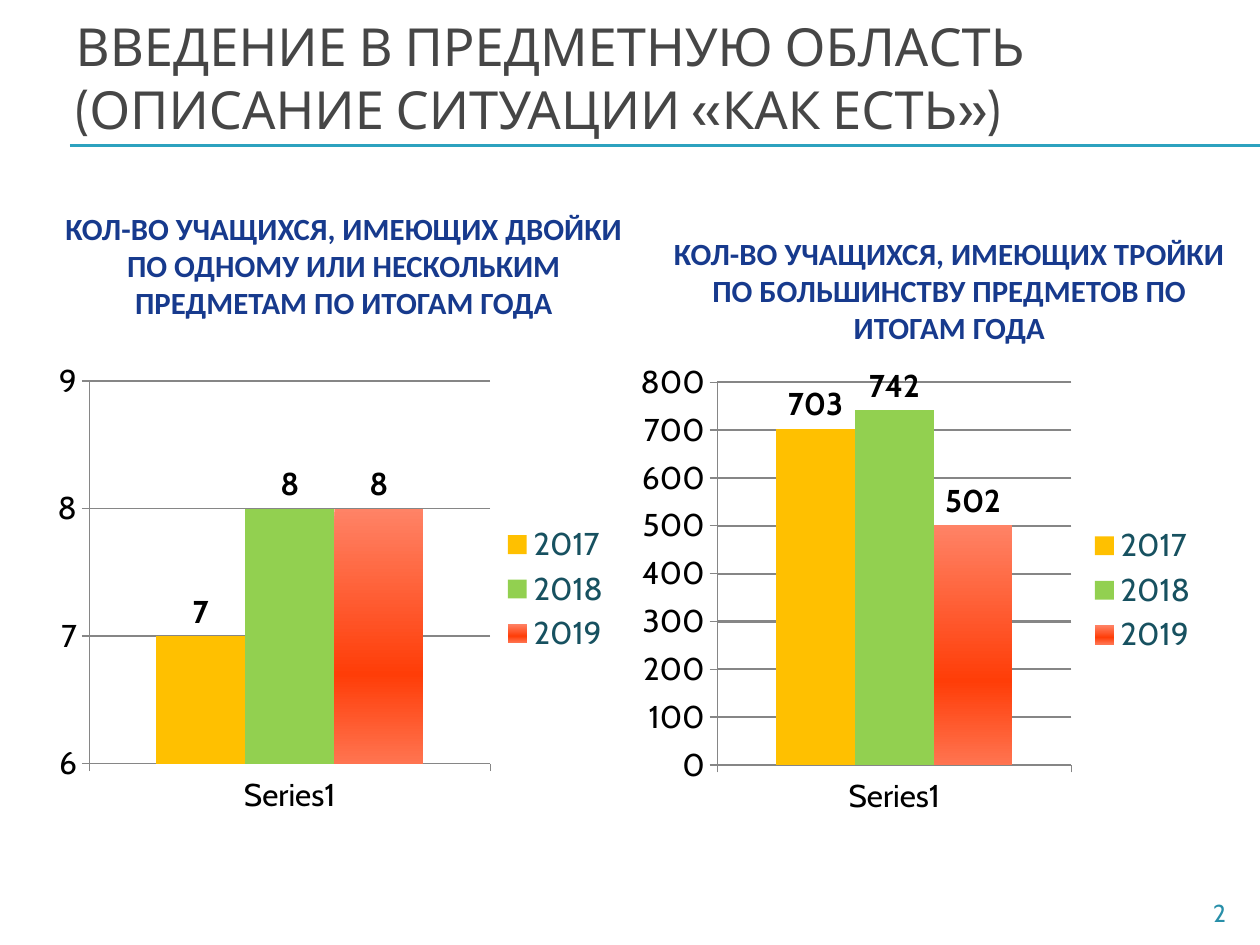
from copy import deepcopy

from lxml import etree
from pptx import Presentation
from pptx.chart.data import CategoryChartData
from pptx.dml.color import RGBColor
from pptx.enum.chart import XL_CHART_TYPE as Chart, XL_LABEL_POSITION as LabelPos
from pptx.enum.chart import XL_LEGEND_POSITION as LegendPos, XL_TICK_MARK as Tick
from pptx.enum.shapes import MSO_CONNECTOR as Conn, MSO_SHAPE as Shape
from pptx.enum.text import MSO_ANCHOR as Anchor, MSO_AUTO_SIZE as AutoSize, PP_ALIGN as Align
from pptx.oxml import parse_xml
from pptx.oxml.ns import nsdecls, qn
from pptx.util import Pt


def rgb(value):
    return RGBColor.from_string(value)


class Deck:
    font, heading_font = "Cabin", "Calibri"
    teal, heading, grey, axis = "2DA2BF", "173A8D", "464646", "868686"
    years = {"2017": "FFC000", "2018": "92D050", "2019": None}
    red_stops = [(0, "FF8366"), (65, "FF3D08"), (100, "FF7450")]

    def __init__(self, width, height):
        self.prs = Presentation()
        self.prs.slide_width, self.prs.slide_height = Pt(width), Pt(height)
        self.s = None

    def add_slide(self):
        self.s = self.prs.slides.add_slide(self.prs.slide_layouts[5])

    def style(self, font, size, color, bold=False, name=None):
        font.name, font.size, font.bold = name or self.font, Pt(size), bold
        font.color.rgb = rgb(color)

    def run(self, p, text, size, color, **kw):
        r = p.add_run()
        r.text = text
        self.style(r.font, size, color, **kw)

    def title(self, lines, x, y, w, h):
        sp = self.s.shapes.title
        sp.left, sp.top, sp.width, sp.height = Pt(x), Pt(y), Pt(w), Pt(h)
        tf = sp.text_frame
        tf.auto_size, tf.vertical_anchor = AutoSize.NONE, Anchor.MIDDLE
        p = tf.paragraphs[0]
        p.alignment = Align.LEFT
        for i, line in enumerate(lines):
            if i:
                p.add_line_break()
            self.run(p, line, 30, self.grey)

    def rule(self, x1, x2, y):
        ln = self.s.shapes.add_connector(Conn.STRAIGHT, Pt(x1), Pt(y), Pt(x2), Pt(y))
        ln.line.color.rgb, ln.line.width = rgb(self.teal), Pt(0.75)
        etree.SubElement(ln._element.spPr, qn("a:effectLst"))

    def text(self, text, x, y, w, h):
        tf = self.s.shapes.add_textbox(Pt(x), Pt(y), Pt(w), Pt(h)).text_frame
        tf.word_wrap = True
        tf.margin_top = tf.margin_bottom = 0
        p = tf.paragraphs[0]
        p.alignment = Align.RIGHT
        self.run(p, text, 14, "288FA9")

    def chart_heading(self, text, x, y, w, h):
        sp = self.s.shapes.add_shape(Shape.RECTANGLE, Pt(x), Pt(y), Pt(w), Pt(h))
        sp.shadow.inherit = False
        sp.line.fill.background()
        sp.fill.solid()
        sp.fill.fore_color.rgb = rgb("FFFFFF")
        color = sp._element.spPr.find(".//" + qn("a:srgbClr"))
        etree.SubElement(color, qn("a:alpha"), val="74000")
        tf = sp.text_frame
        tf.word_wrap, tf.vertical_anchor = True, Anchor.MIDDLE
        p = tf.paragraphs[0]
        p.alignment = Align.CENTER
        self.run(p, text, 17.6, self.heading, bold=True, name=self.heading_font)

    def red_gradient(self, fill, sp_pr):
        fill.gradient()
        fill.gradient_angle = 270
        stops = sp_pr.find(".//" + qn("a:gsLst"))
        stops.insert(1, deepcopy(stops[0]))
        for stop, (pos, color) in zip(fill.gradient_stops, self.red_stops):
            stop.position, stop.color.rgb = pos / 100, rgb(color)

    def plot_layout(self, chart, x, y, w, h):
        parts = "".join(f'<c:{tag} val="{val}"/>' for tag, val in [
            ("layoutTarget", "inner"), ("xMode", "edge"), ("yMode", "edge"),
            ("x", x), ("y", y), ("w", w), ("h", h)])
        area = chart._chartSpace.find(".//" + qn("c:plotArea"))
        for old in area.findall(qn("c:layout")):
            area.remove(old)
        area.insert(0, parse_xml(f"<c:layout {nsdecls('c')}><c:manualLayout>"
                                 f"{parts}</c:manualLayout></c:layout>"))

    def chart(self, values, x, y, w, h, scale, plot, grid_width):
        data = CategoryChartData()
        data.categories = ["Series1"]
        for year, value in zip(self.years, values):
            data.add_series(year, [value])
        chart = self.s.shapes.add_chart(
            Chart.COLUMN_CLUSTERED, Pt(x), Pt(y), Pt(w), Pt(h), data).chart
        self.style(chart.font, 18, "000000")
        chart.has_title = False
        self.plot_layout(chart, *plot)

        # Legend
        chart.has_legend = True
        chart.legend.position = LegendPos.RIGHT
        chart.legend.include_in_layout = False
        self.style(chart.legend.font, 18, "175160")

        # Axes
        val_ax = chart.value_axis
        val_ax.minimum_scale, val_ax.maximum_scale, val_ax.major_unit = scale
        for ax in (chart.category_axis, val_ax):
            ax.major_tick_mark = Tick.OUTSIDE
            ax.format.line.color.rgb = rgb(self.axis)
            ax.format.line.width = Pt(0.75)
        grid = val_ax.major_gridlines.format.line
        grid.color.rgb, grid.width = rgb(self.axis), Pt(grid_width)

        # Columns
        cols = chart.plots[0]
        cols.gap_width, cols.overlap, cols.vary_by_categories = 150, 0, False
        for ser, color in zip(cols.series, self.years.values()):
            fill = ser.format.fill
            if color:
                fill.solid()
                fill.fore_color.rgb = rgb(color)
            else:
                self.red_gradient(fill, ser._element.spPr)
            labels = ser.data_labels
            labels.show_value, labels.position = True, LabelPos.OUTSIDE_END
            self.style(labels.font, 18, "000000", bold=True)


def main():
    deck = Deck(720, 540)
    deck.add_slide()

    # Title and the double rule under it
    for y in (82.8, 83.5):
        deck.rule(40, 720, y)
    deck.title(["ВВЕДЕНИЕ В ПРЕДМЕТНУЮ ОБЛАСТЬ", "(ОПИСАНИЕ СИТУАЦИИ «КАК ЕСТЬ»)"],
               36, 11, 684, 66)

    # Failing marks
    deck.chart([7, 8, 8], 24.5, 201.6, 332, 270, (6, 9, 1), (0.08, 0.06, 0.69, 0.81), 0.75)
    deck.chart_heading("КОЛ-ВО УЧАЩИХСЯ, ИМЕЮЩИХ ДВОЙКИ ПО ОДНОМУ ИЛИ НЕСКОЛЬКИМ "
                       "ПРЕДМЕТАМ ПО ИТОГАМ ГОДА", 22.3, 106.5, 348.5, 90)

    # Satisfactory marks
    deck.chart([703, 742, 502], 360, 202.3, 332, 270, (0, 800, 100),
               (0.15, 0.06, 0.61, 0.81), 1.25)
    deck.chart_heading("КОЛ-ВО УЧАЩИХСЯ, ИМЕЮЩИХ ТРОЙКИ ПО БОЛЬШИНСТВУ ПРЕДМЕТОВ "
                       "ПО ИТОГАМ ГОДА", 376.5, 123.8, 332, 84.2)

    # Slide number
    deck.text("2", 36.7, 513, 671, 19.5)
    deck.prs.save("out.pptx")


if __name__ == "__main__":
    main()
